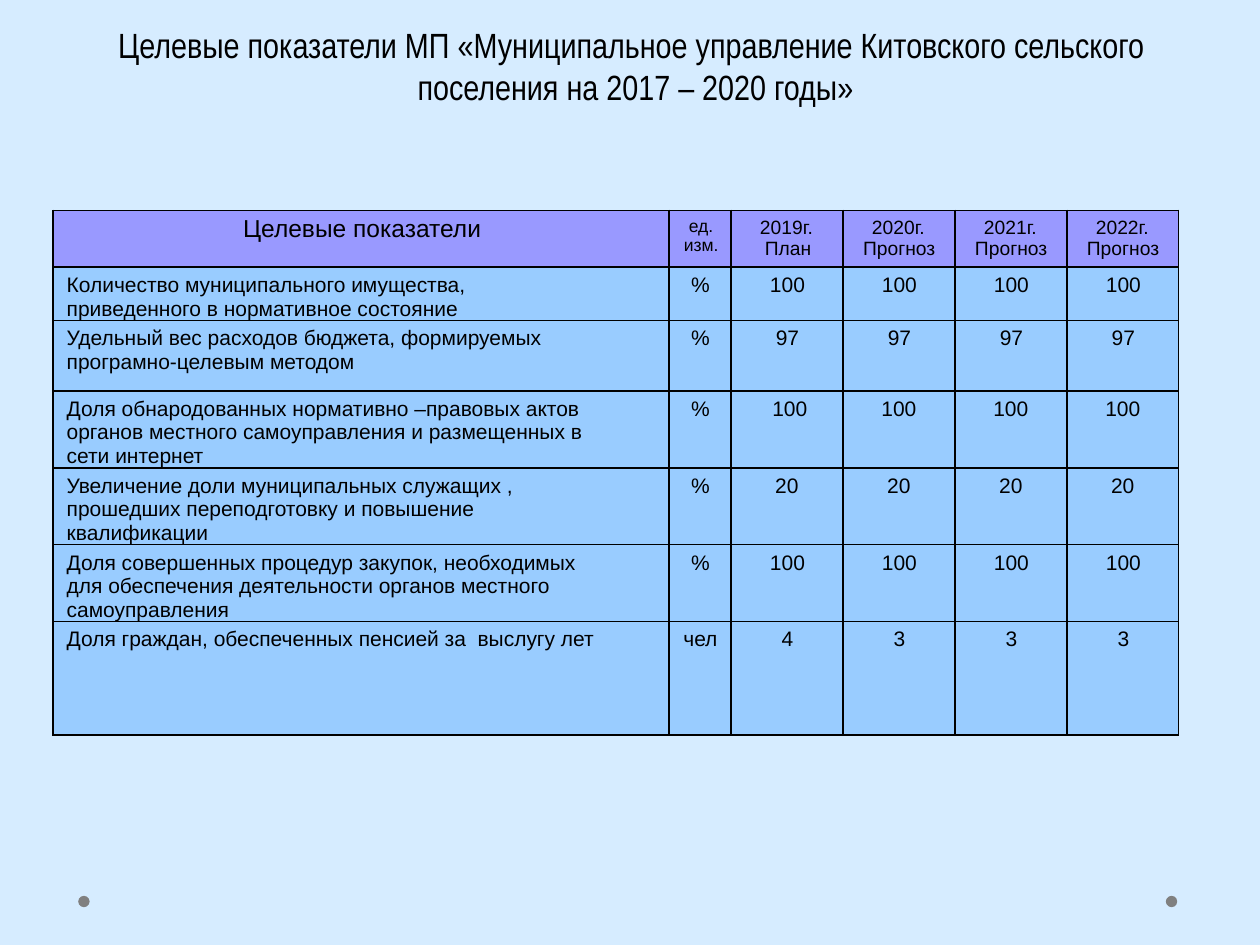
from lxml import etree
from pptx import Presentation
from pptx.dml.color import RGBColor
from pptx.enum.shapes import MSO_SHAPE
from pptx.enum.text import MSO_ANCHOR, MSO_AUTO_SIZE, PP_ALIGN
from pptx.oxml.ns import qn
from pptx.util import Pt

CENTER, LEFT = PP_ALIGN.CENTER, PP_ALIGN.LEFT
TOP = MSO_ANCHOR.TOP
NO_AUTOFIT = MSO_AUTO_SIZE.NONE
OVAL = MSO_SHAPE.OVAL

BACKGROUND = RGBColor(0xD6, 0xEC, 0xFF)
HEADER_FILL = RGBColor(0x99, 0x99, 0xFF)
BODY_FILL = RGBColor(0x99, 0xCC, 0xFF)
BLACK = RGBColor(0, 0, 0)
GRAY = RGBColor(0x80, 0x80, 0x80)

TITLE_LINES = [
    "Целевые показатели МП «Муниципальное управление Китовского сельского ",
    "поселения на 2017 – 2020 годы»",
]
YEARS = [("2019г.", "План"), ("2020г.", "Прогноз"),
         ("2021г.", "Прогноз"), ("2022г.", "Прогноз")]
COLUMN_WIDTHS = [352, 35.5, 64, 64, 64, 64]
HEADER_HEIGHT = 32.5
HANGING = -15.8

# indicator, unit, values, row height, right margin of the indicator, value indent
INDICATORS = [
    ("Количество муниципального имущества,  приведенного в нормативное состояние",
     "%", ["100"] * 4, 30.3, 60, 0),
    ("Удельный вес расходов бюджета, формируемых програмно-целевым методом",
     "%", ["97"] * 4, 40.2, 42, 0),
    ("Доля обнародованных нормативно –правовых актов  органов местного "
     "самоуправления и размещенных в сети интернет",
     "%", [" 100", "100", "100", "100"], 43.5, 42, HANGING),
    ("Увеличение доли муниципальных служащих , прошедших переподготовку "
     "и повышение квалификации",
     "%", ["20"] * 4, 43.5, 42, HANGING),
    ("Доля совершенных процедур закупок, необходимых для обеспечения "
     "деятельности органов местного самоуправления",
     "%", ["100"] * 4, 43.5, 42, 0),
    ("Доля граждан, обеспеченных пенсией за  выслугу лет",
     "чел", ["4", "3", "3", "3"], 64.8, 30, 0),
]


def format_paragraph(paragraph, size, font_name, alignment):
    paragraph.alignment = alignment
    for run in paragraph.runs:
        run.font.size = Pt(size)
        run.font.name = font_name
        run.font.color.rgb = BLACK


def add_title(slide, left, top, width, height):
    title = slide.shapes.title
    title.left, title.top = Pt(left), Pt(top)
    title.width, title.height = Pt(width), Pt(height)
    frame = title.text_frame
    frame.text = "\n".join(TITLE_LINES)
    frame.word_wrap = True
    frame.auto_size = NO_AUTOFIT
    frame.vertical_anchor = TOP
    for paragraph in frame.paragraphs:
        format_paragraph(paragraph, 20, "Arial Narrow", CENTER)


def set_borders(cell):
    """Draw a black 1 pt line on all sides; call before the fill is set."""
    properties = cell._tc.get_or_add_tcPr()
    for side in ("a:lnL", "a:lnR", "a:lnT", "a:lnB"):
        line = etree.SubElement(properties, qn(side), w=str(Pt(1)))
        fill = etree.SubElement(line, qn("a:solidFill"))
        etree.SubElement(fill, qn("a:srgbClr"), val=str(BLACK))


def fill_cell(cell, lines, size, fill, alignment=LEFT, indents=((0, 0),),
              space_before=3.3, right=0, top=3.6):
    """Write the lines; indents holds (left margin, first-line indent) of each."""
    set_borders(cell)
    cell.fill.solid()
    cell.fill.fore_color.rgb = fill
    cell.margin_left = cell.margin_bottom = 0
    cell.margin_top, cell.margin_right = Pt(top), Pt(right)
    cell.vertical_anchor = TOP
    cell.text_frame.text = "\n".join(lines)
    for paragraph, (margin, indent) in zip(cell.text_frame.paragraphs, indents):
        format_paragraph(paragraph, size, "Arial", alignment)
        properties = paragraph._p.get_or_add_pPr()
        properties.set("marL", str(Pt(margin)))
        properties.set("indent", str(Pt(indent)))
    cell.text_frame.paragraphs[0].space_before = Pt(space_before)


def fill_header(table):
    fill_cell(table.cell(0, 0), ["Целевые показатели"], 14, HEADER_FILL,
              indents=[(108.7, 0)], space_before=3.1, top=2.9)
    fill_cell(table.cell(0, 1), ["ед.  изм."], 10, HEADER_FILL,
              indents=[(8.6, 2.9)])
    for column, (year, status) in enumerate(YEARS, start=2):
        status_margin = 19.4 if status == "План" else 11.5
        fill_cell(table.cell(0, column), [year, status], 11, HEADER_FILL,
                  indents=[(16.6, 0), (status_margin, 0)], space_before=3.2)


def add_indicator_table(slide, left, top):
    heights = [HEADER_HEIGHT] + [indicator[3] for indicator in INDICATORS]
    table = slide.shapes.add_table(
        len(heights), len(COLUMN_WIDTHS), Pt(left), Pt(top),
        Pt(sum(COLUMN_WIDTHS)), Pt(sum(heights))).table
    table.first_row = table.horz_banding = False
    for column, width in zip(table.columns, COLUMN_WIDTHS):
        column.width = Pt(width)
    for row, height in zip(table.rows, heights):
        row.height = Pt(height)

    fill_header(table)
    for row, (name, unit, values, _, right, indent) in enumerate(INDICATORS, start=1):
        fill_cell(table.cell(row, 0), [name], 12, BODY_FILL,
                  indents=[(7.9, 0)], right=right)
        fill_cell(table.cell(row, 1), [unit], 12, BODY_FILL, CENTER, [(0.7, 0)])
        for column, value in enumerate(values, start=2):
            fill_cell(table.cell(row, column), [value], 12, BODY_FILL, CENTER,
                      [(0.7, indent)])


def add_footer_dots(slide, left, top, width, diameter):
    for dot_left in (left, left + width - diameter):
        dot = slide.shapes.add_shape(OVAL, Pt(dot_left), Pt(top),
                                     Pt(diameter), Pt(diameter))
        dot.shadow.inherit = False
        dot.fill.solid()
        dot.fill.fore_color.rgb = GRAY
        dot.line.fill.background()


def main():
    presentation = Presentation()
    presentation.slide_width, presentation.slide_height = Pt(720), Pt(540)
    slide = presentation.slides.add_slide(presentation.slide_layouts[5])
    slide.background.fill.solid()
    slide.background.fill.fore_color.rgb = BACKGROUND
    add_footer_dots(slide, 44.7, 511.9, 628, 6.5)
    add_indicator_table(slide, 30.2, 120.2)
    add_title(slide, 12.2, 10.1, 702, 80)
    presentation.save("out.pptx")


if __name__ == "__main__":
    main()
